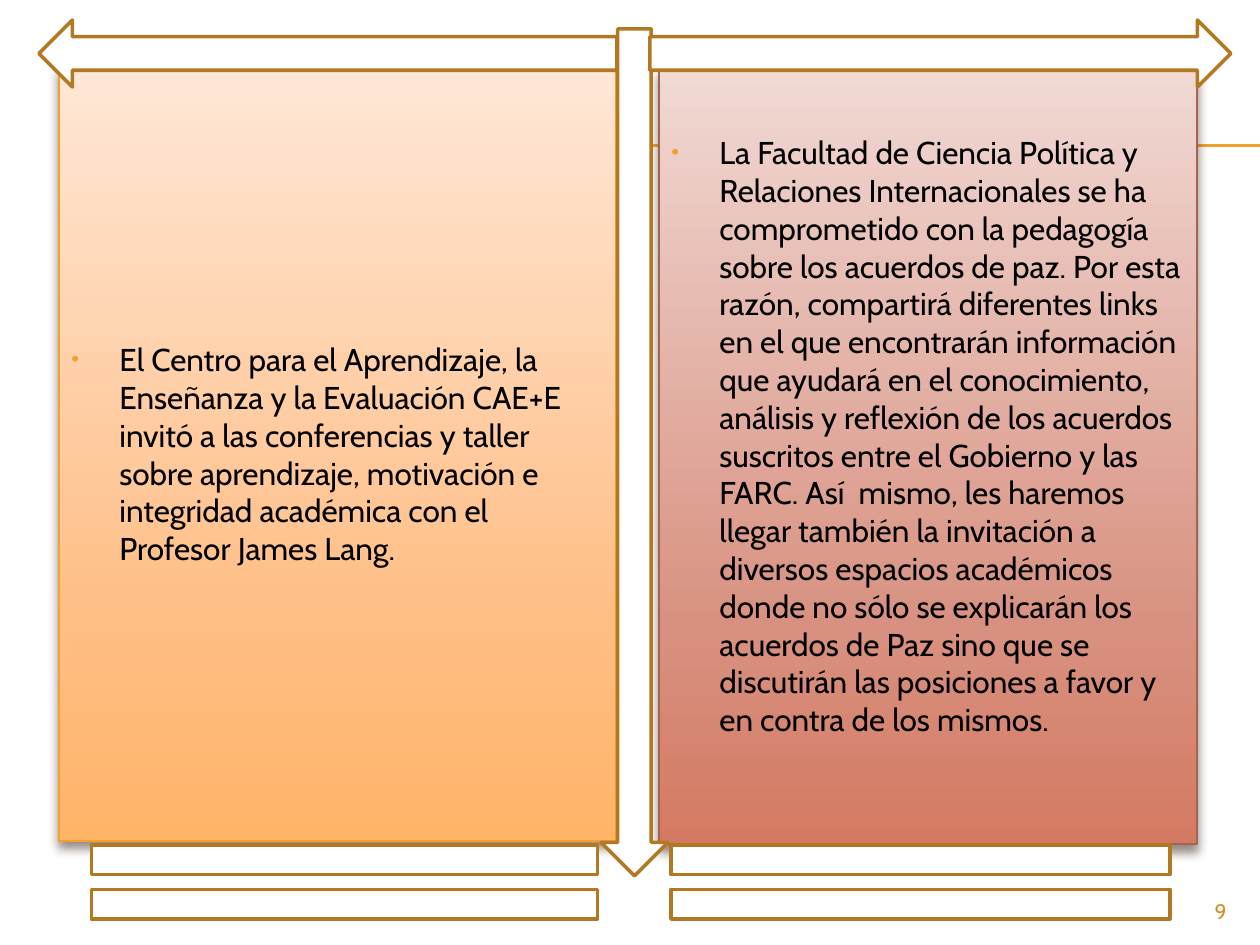
import copy

import pptx
import pptx.dml.color
import pptx.enum.shapes
import pptx.enum.text
import pptx.oxml
import pptx.oxml.ns
import pptx.util

PX = 7257  # EMU per px, 126 px to the inch
FONT = "Cabin"
SHAPE = pptx.enum.shapes.MSO_SHAPE
ALIGN = pptx.enum.text.PP_ALIGN
ANCHOR = pptx.enum.text.MSO_ANCHOR
NS = pptx.oxml.ns.nsdecls("a")

LEFT_TEXT = (
    "El Centro para el Aprendizaje, la Enseñanza y la Evaluación CAE+E invitó a las "
    "conferencias y taller sobre aprendizaje, motivación e integridad académica con el "
    "Profesor James Lang."
)
RIGHT_TEXT = (
    "La Facultad de Ciencia Política y Relaciones Internacionales se ha comprometido con "
    "la pedagogía sobre los acuerdos de paz. Por esta razón, compartirá diferentes links "
    "en el que encontrarán información que ayudará en el conocimiento, análisis y "
    "reflexión de los acuerdos suscritos entre el Gobierno y las FARC. Así  mismo, les "
    "haremos llegar también la invitación a diversos espacios académicos donde no sólo "
    "se explicarán los acuerdos de Paz sino que se discutirán las posiciones a favor y "
    "en contra de los mismos."
)


def px(*values):
    return [pptx.util.Emu(v * PX) for v in values]


def rgb(color):
    return pptx.dml.color.RGBColor.from_string(color)


def add_xml(parent, xml):
    parent.append(pptx.oxml.parse_xml(xml))


def write(sp, text, size=18, color="000000", align=ALIGN.LEFT,
          anchor=ANCHOR.TOP, bullet=None):
    tf = sp.text_frame
    tf.word_wrap = True
    tf.vertical_anchor = anchor
    p = tf.paragraphs[0]
    p.alignment = align
    if bullet:
        pPr = p._p.get_or_add_pPr()
        indent = 48 * PX
        pPr.set("marL", str(indent))
        pPr.set("indent", str(-indent))
        add_xml(pPr, f'<a:buClr {NS}><a:srgbClr val="{bullet}"/></a:buClr>')
        add_xml(pPr, f'<a:buSzPct {NS} val="70000"/>')
        add_xml(pPr, f'<a:buFont {NS} typeface="Arial"/>')
        add_xml(pPr, f'<a:buChar {NS} char="•"/>')
    r = p.add_run()
    r.text = text
    r.font.name = FONT
    r.font.size = pptx.util.Pt(size)
    r.font.color.rgb = rgb(color)


def add_rule(slide, x1, x2, y):
    line = slide.shapes.add_connector(
        pptx.enum.shapes.MSO_CONNECTOR.STRAIGHT, *px(x1, y, x2, y))
    line.line.color.rgb = rgb("F0A22E")
    line.line.width = pptx.util.Pt(0.75)
    add_xml(line._element.spPr, f"<a:effectLst {NS}/>")


def add_outlined(slide, kind, box, line, width):
    sp = slide.shapes.add_shape(kind, *px(*box))
    sp.shadow.inherit = False
    sp.fill.solid()
    sp.fill.fore_color.rgb = rgb("FFFFFF")
    sp.line.color.rgb = rgb(line)
    sp.line.width = pptx.util.Pt(width)
    return sp


def add_panel(slide, box, text, colors, line, bottom=6):
    """Shaded, shadowed panel holding one bulleted paragraph."""
    sp = add_outlined(slide, SHAPE.RECTANGLE, box, line, 0.79)
    # Vertical three-stop gradient
    sp.fill.gradient()
    sp.fill.gradient_angle = 270
    stops = sp._element.spPr.xpath(".//a:gsLst")[0]
    stops.append(copy.deepcopy(stops[0]))
    for stop, position, color in zip(sp.fill.gradient_stops, (0, 0.72, 1), colors):
        stop.position = position
        stop.color.rgb = rgb(color)
    # Soft shadow below
    effects = sp._element.spPr.xpath("./a:effectLst")[0]
    add_xml(effects,
            f'<a:outerShdw {NS} blurRad="76200" dist="50800" dir="5400000" '
            'rotWithShape="0"><a:srgbClr val="4E3B30"><a:alpha val="60000"/>'
            '</a:srgbClr></a:outerShdw>')
    write(sp, text, anchor=ANCHOR.MIDDLE, bullet="F0A22E")
    sp.text_frame.margin_bottom = px(bottom)[0]


def add_frame(slide):
    """Arrows and equal signs around the two panels."""
    for kind, box in (
        (SHAPE.DOWN_ARROW, (601, 29, 67, 847)),
        (SHAPE.RIGHT_ARROW, (650, 20, 581, 67)),
        (SHAPE.LEFT_ARROW, (39, 20, 578, 67)),
        (SHAPE.MATH_EQUAL, (0, 819, 689, 126)),
        (SHAPE.MATH_EQUAL, (581, 819, 679, 126)),
    ):
        add_outlined(slide, kind, box, "B27822", 2)


def main():
    prs = pptx.Presentation()
    prs.slide_width, prs.slide_height = pptx.util.Inches(10), pptx.util.Inches(7.5)
    slide = prs.slides.add_slide(prs.slide_layouts[6])

    # Double rule behind the panels
    for y in (145, 146):
        add_rule(slide, 71, 1260, y)

    # Panels
    add_panel(slide, (59, 66, 557, 775), LEFT_TEXT,
              ("FFE7D7", "FFBE84", "FFB468"), "F0A22E")
    add_panel(slide, (659, 69, 538, 775), RIGHT_TEXT,
              ("F1D9D4", "D89180", "D47A62"), "A5644E", bottom=48)

    add_frame(slide)

    # Slide number
    number = slide.shapes.add_textbox(*px(1134, 892, 105, 34))
    write(number, "9", size=12, color="D48F29", align=ALIGN.RIGHT)

    prs.save("out.pptx")


if __name__ == "__main__":
    main()
